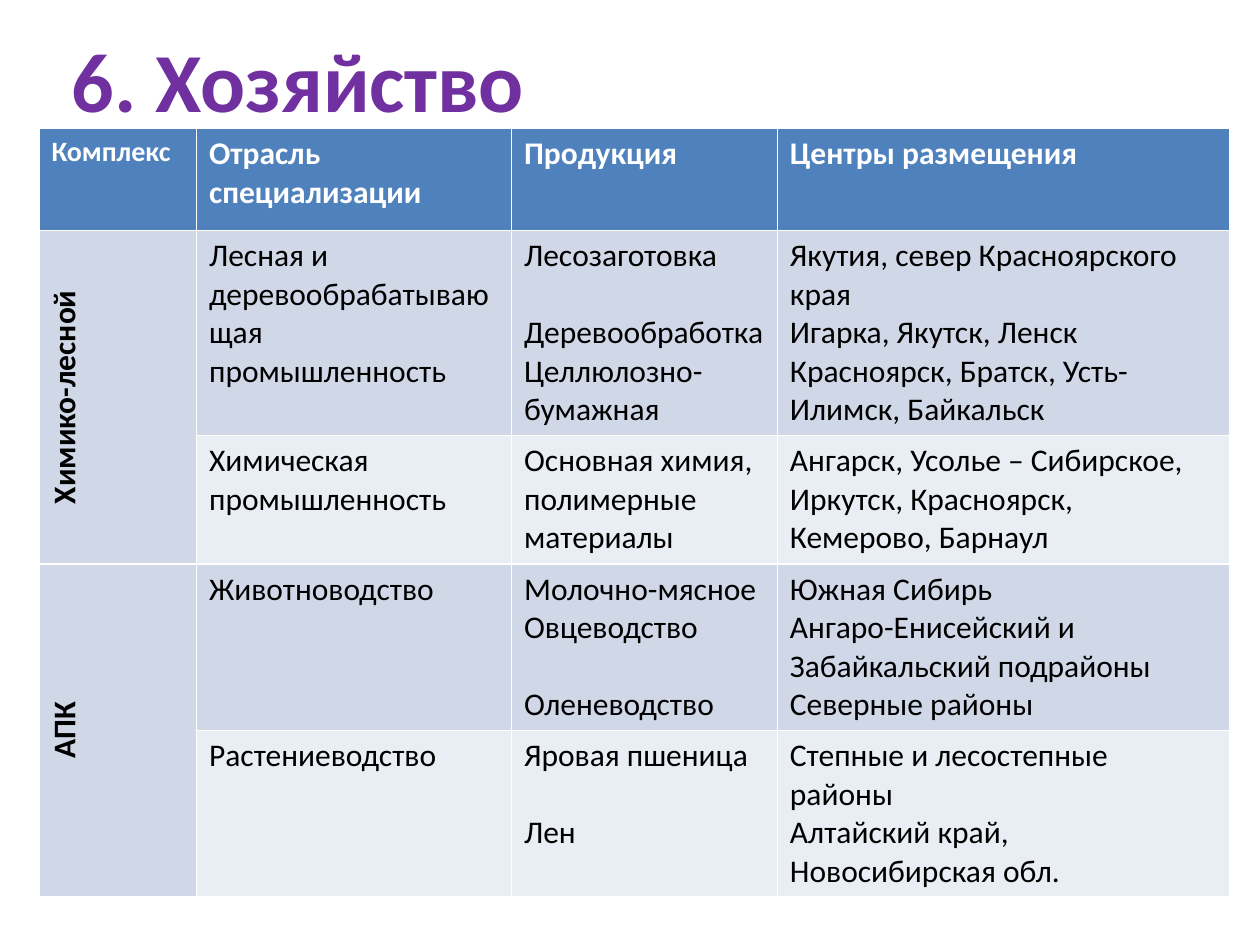
from lxml import etree
from pptx import Presentation
from pptx import util as u
from pptx.dml.color import RGBColor
from pptx.enum import text
from pptx.oxml import ns

FONT = "Calibri"
WHITE, BLACK, PURPLE = "FFFFFF", "000000", "7030A0"
HEADER_FILL, BANDS = "4F81BD", ("D0D8E8", "E9EDF4")
LINE_GAP = 22  # one line of 18 pt text

TITLE = "6. Хозяйство"
HEADERS = ["Комплекс", "Отрасль специализации", "Продукция", "Центры размещения"]
# Each complex holds its branches: branch, products, centres.
# A product is a text and the number of free lines above it.
COMPLEXES = [
    ("Химико-лесной", [
        ("Лесная и деревообрабатывающая промышленность",
         [("Лесозаготовка", 0), ("Деревообработка", 1), ("Целлюлозно-бумажная", 0)],
         ["Якутия, север Красноярского края", "Игарка, Якутск, Ленск",
          "Красноярск, Братск, Усть-Илимск, Байкальск"]),
        ("Химическая промышленность",
         [("Основная химия, полимерные материалы", 0)],
         ["Ангарск, Усолье – Сибирское, Иркутск, Красноярск, Кемерово, Барнаул"]),
    ]),
    ("АПК", [
        ("Животноводство",
         [("Молочно-мясное", 0), ("Овцеводство", 0), ("Оленеводство", 1)],
         ["Южная Сибирь", "Ангаро-Енисейский и Забайкальский подрайоны",
          "Северные районы"]),
        ("Растениеводство",
         [("Яровая пшеница", 0), ("Лен", 1)],
         ["Степные и лесостепные районы", "Алтайский край, Новосибирская обл."]),
    ]),
]
COLUMN_WIDTHS = [1.25, 2.5, 2.11, 3.59]
ROW_HEIGHTS = [0.81, 1.62, 1.02, 1.32, 1.32]


def color(value):
    return RGBColor.from_string(value)


def add_run(paragraph, content, size, ink, bold):
    run = paragraph.add_run()
    run.text = content
    run.font.name = FONT
    run.font.size = u.Pt(size)
    run.font.bold = bold
    run.font.color.rgb = color(ink)
    return run


def fill_cell(cell, lines, fill, size=18, ink=BLACK, bold=False):
    """Write (text, free lines above) pairs as paragraphs of a filled cell."""
    cell.fill.solid()
    cell.fill.fore_color.rgb = color(fill)
    for index, (content, free_lines) in enumerate(lines):
        frame = cell.text_frame
        paragraph = frame.add_paragraph() if index else frame.paragraphs[0]
        if free_lines:
            paragraph.space_before = u.Pt(free_lines * LINE_GAP)
        add_run(paragraph, content, size, ink, bold)


def fill_complex_cell(table, row, name, row_count):
    cell = table.cell(row, 0)
    cell.merge(table.cell(row + row_count - 1, 0))
    fill_cell(cell, [(name, 0)], BANDS[0], bold=True)
    cell.vertical_anchor = text.MSO_ANCHOR.MIDDLE
    cell.text_frame.paragraphs[0].alignment = text.PP_ALIGN.CENTER
    cell._tc.get_or_add_tcPr().set("vert", "vert270")


def add_economy_table(slide):
    table = slide.shapes.add_table(
        len(ROW_HEIGHTS), len(COLUMN_WIDTHS), u.Inches(0.31), u.Inches(1.02),
        u.Inches(sum(COLUMN_WIDTHS)), u.Inches(sum(ROW_HEIGHTS))).table
    for column, width in zip(table.columns, COLUMN_WIDTHS):
        column.width = u.Inches(width)
    for table_row, height in zip(table.rows, ROW_HEIGHTS):
        table_row.height = u.Inches(height)

    for column, header in enumerate(HEADERS):
        fill_cell(table.cell(0, column), [(header, 0)], HEADER_FILL,
                  size=18 if column else 16, ink=WHITE, bold=True)
    row = 1
    for name, branches in COMPLEXES:
        fill_complex_cell(table, row, name, len(branches))
        for branch, products, centres in branches:
            contents = [[(branch, 0)], products, [(centre, 0) for centre in centres]]
            for column, lines in enumerate(contents, start=1):
                fill_cell(table.cell(row, column), lines, BANDS[(row - 1) % 2])
            row += 1


def format_title(title):
    title.left, title.top = u.Inches(0.47), 0
    title.width, title.height = u.Inches(4.27), u.Inches(1.25)
    title.text_frame.vertical_anchor = text.MSO_ANCHOR.MIDDLE
    paragraph = title.text_frame.paragraphs[0]
    paragraph.alignment = text.PP_ALIGN.LEFT
    run = add_run(paragraph, TITLE, 48, PURPLE, True)
    outline = etree.Element(ns.qn("a:ln"), w=str(u.Pt(1.4)))
    solid = etree.SubElement(outline, ns.qn("a:solidFill"))
    etree.SubElement(solid, ns.qn("a:srgbClr"), val=WHITE)
    run.font._element.insert(0, outline)


def main():
    presentation = Presentation()
    presentation.slide_width, presentation.slide_height = u.Inches(10), u.Inches(7.5)
    slide = presentation.slides.add_slide(presentation.slide_layouts[5])
    add_economy_table(slide)
    title = slide.shapes.title
    format_title(title)
    title.element.getparent().append(title.element)  # in front of the table
    presentation.save("out.pptx")


if __name__ == "__main__":
    main()
